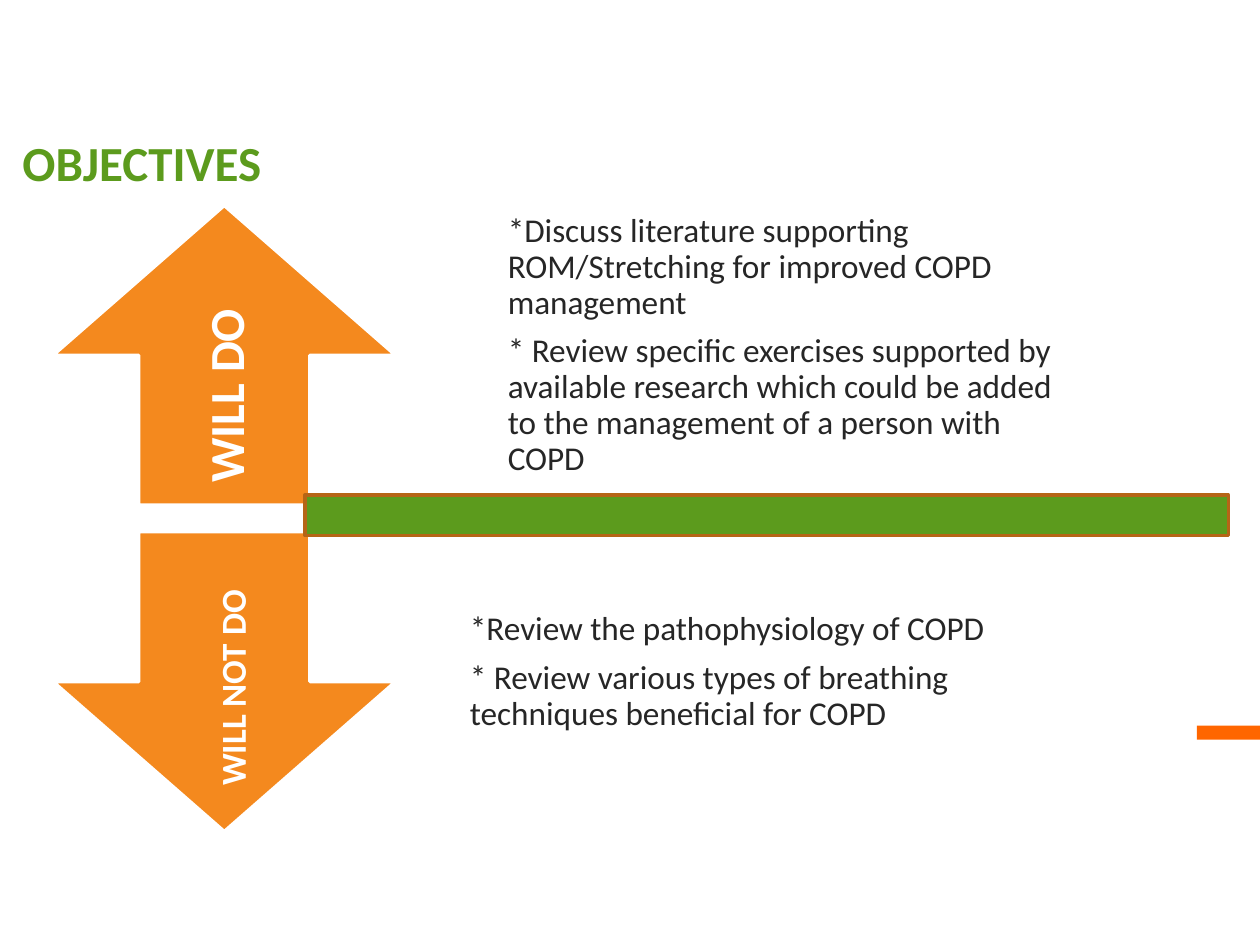
from pptx import Presentation, util as u
from pptx.dml.color import RGBColor
from pptx.enum import shapes, text

Inches, Pt = u.Inches, u.Pt
THEME = {
    "font": "Calibri", "green": "5C9B1D", "orange": "F4891E", "tab": "FF6600",
    "edge": "B56516", "ink": "262626", "white": "FFFFFF",
    "head": 28, "label": 20, "body": 19,
}

deck = Presentation()
deck.slide_width, deck.slide_height = Inches(10), Inches(7.5)
slide = deck.slides.add_slide(deck.slide_layouts[6])


def add_block(kind, box, fill, line=None):
    block = slide.shapes.add_shape(kind, *map(Inches, box))
    block.shadow.inherit = False
    block.fill.solid()
    block.fill.fore_color.rgb = RGBColor.from_string(THEME[fill])
    if line:
        block.line.color.rgb = RGBColor.from_string(THEME[line])
        block.line.width = Pt(2)
    else:
        block.line.fill.background()


def add_words(box, lines, size, color, bold=False):
    label = slide.shapes.add_textbox(*map(Inches, box))
    frame = label.text_frame
    frame.word_wrap = True
    frame.text = "\n".join(lines)
    look = {"name": THEME["font"], "size": Pt(THEME[size]), "bold": bold}
    for para in frame.paragraphs:
        for key, val in look.items():
            setattr(para.font, key, val)
        para.font.color.rgb = RGBColor.from_string(THEME[color])
    return label


add_block(shapes.MSO_SHAPE.RECTANGLE, (9.5, 5.76, 0.5, 0.11), "tab")
add_words((0.08, 1, 3.53, 0.57), ["OBJECTIVES"], "head", "green", True)

# Arrow, top edge, left edge of its goals, goals
rows = [
    (shapes.MSO_SHAPE.UP_ARROW, 1.63, 3.88, [
        "*Discuss literature supporting ROM/Stretching for improved COPD management",
        "* Review specific exercises supported by available research which could be "
        "added to the management of a person with COPD"]),
    (shapes.MSO_SHAPE.DOWN_ARROW, 4.22, 3.58, [
        "*Review the pathophysiology of COPD",
        "* Review various types of breathing techniques beneficial for COPD"]),
]
inset = Inches(0.15)
layout = {"vertical_anchor": text.MSO_ANCHOR.MIDDLE, "margin_left": inset,
          "margin_top": 0, "margin_right": inset, "margin_bottom": inset}
for kind, top, left, goals in rows:
    add_block(kind, (0.42, top, 2.72, 2.38), "orange", "white")
    frame = add_words((left, top, 4.62, 2.38), goals, "body", "ink").text_frame
    for key, val in layout.items():
        setattr(frame, key, val)
    for para in frame.paragraphs:
        para.line_spacing = 0.9
        para.space_after = Pt(7)

labels = [
    ("WILL DO", (0.86, 2.72, 1.85, 0.57), "head"),
    ("WILL NOT DO", (0.93, 5.2, 1.83, 0.44), "label"),
]
for name, box, size in labels:
    add_words(box, [name], size, "white", True).rotation = 270

add_block(shapes.MSO_SHAPE.RECTANGLE, (2.42, 3.93, 7.33, 0.32), "green", "edge")

deck.save("out.pptx")
